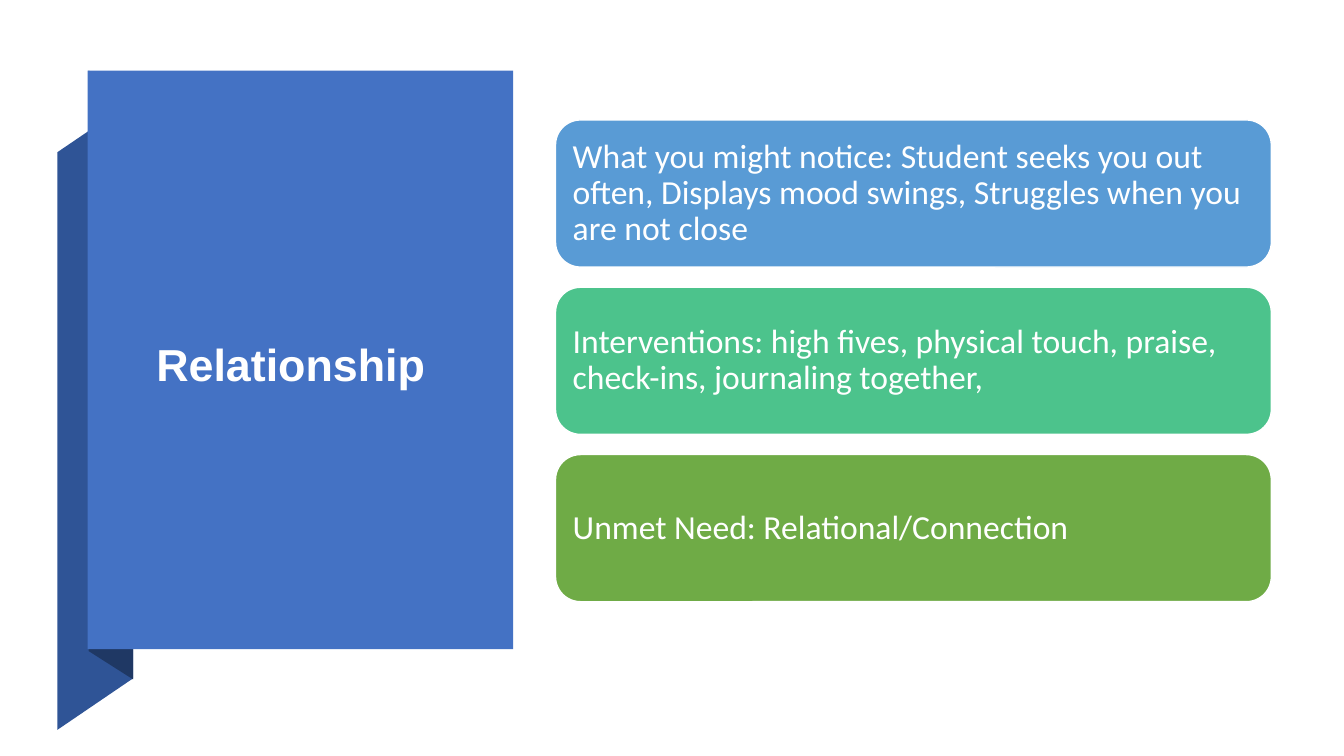
import pptx
import pptx.util
import pptx.dml.color
import pptx.enum.shapes
import pptx.enum.text

RGBColor = pptx.dml.color.RGBColor
SHAPE = pptx.enum.shapes.MSO_SHAPE
PX = 9144

WHITE = RGBColor(0xFF, 0xFF, 0xFF)
PANEL_BLUE = RGBColor(0x44, 0x72, 0xC4)
RIBBON_BLUE = RGBColor(0x2F, 0x54, 0x96)
FOLD_NAVY = RGBColor(0x1F, 0x38, 0x64)
SKY = RGBColor(0x59, 0x9B, 0xD5)
MINT = RGBColor(0x4C, 0xC3, 0x8C)
GREEN = RGBColor(0x6F, 0xAB, 0x46)

TITLE_FONT = {"name": "Arial", "size": pptx.util.Pt(32), "bold": True}
CARD_FONT = {"name": "Calibri", "size": pptx.util.Pt(24), "bold": False}

CARDS = [
    ("What you might notice: Student seeks you out often, Displays mood swings, "
     "Struggles when you are not close", SKY),
    ("Interventions: high fives, physical touch, praise, check-ins, "
     "journaling together,", MINT),
    ("Unmet Need: Relational/Connection", GREEN),
]


def emu(*lengths):
    """Turn px lengths into EMU."""
    return [pptx.util.Emu(n * PX) for n in lengths]


def paint(sp, color):
    """Give a shape a flat fill with no outline or shadow."""
    sp.shadow.inherit = False
    sp.fill.solid()
    sp.fill.fore_color.rgb = color
    sp.line.fill.background()


def write(sp, text, font, inset_x, inset_y):
    """Write one left-aligned, vertically centred white paragraph."""
    tf = sp.text_frame
    inset_x, inset_y = emu(inset_x, inset_y)
    frame = {
        "word_wrap": True,
        "auto_size": pptx.enum.text.MSO_AUTO_SIZE.NONE,
        "vertical_anchor": pptx.enum.text.MSO_ANCHOR.MIDDLE,
        "margin_left": inset_x, "margin_right": inset_x,
        "margin_top": inset_y, "margin_bottom": inset_y,
    }
    for key, value in frame.items():
        setattr(tf, key, value)
    p = tf.paragraphs[0]
    p.alignment = pptx.enum.text.PP_ALIGN.LEFT
    p.line_spacing = 0.9
    r = p.add_run()
    r.text = text
    for key, value in font.items():
        setattr(r.font, key, value)
    r.font.color.rgb = WHITE


def add_outline(slide, x, y, points, color):
    """Draw a closed polygon whose points are offsets from x, y."""
    points = [(x + dx, y + dy) for dx, dy in points]
    builder = slide.shapes.build_freeform(*points[0], scale=PX)
    builder.add_line_segments(points[1:], close=True)
    paint(builder.convert_to_shape(), color)


def add_title_panel(slide, x, y, w, h, text):
    """Place the folded ribbon, the panel and the title in the box."""
    add_outline(slide, x, y, [(-30, h + 80), (45, h + 29), (45, 30), (-30, 81)],
                RIBBON_BLUE)
    add_outline(slide, x, y, [(1, h + 2), (45, h + 30), (45, 29), (1, 0)],
                FOLD_NAVY)
    paint(slide.shapes.add_shape(SHAPE.RECTANGLE, *emu(x, y, w, h)), PANEL_BLUE)
    title = slide.shapes.title
    title.left, title.top, title.width, title.height = emu(
        x + 58, y + 97, w - 87, h - 180)
    write(title, text, TITLE_FONT, 10, 5)
    title.element.getparent().append(title.element)


def add_cards(slide, x, y, w, h, cards, gap=20):
    """Stack equal rounded cards down the box."""
    card_h = (h - gap * (len(cards) - 1)) // len(cards)
    for i, (text, color) in enumerate(cards):
        sp = slide.shapes.add_shape(
            SHAPE.ROUNDED_RECTANGLE, *emu(x, y + i * (card_h + gap), w, card_h))
        sp.adjustments[0] = 0.17
        paint(sp, color)
        sp.line.color.rgb = WHITE
        sp.line.width = pptx.util.Pt(1)
        write(sp, text, CARD_FONT, 10, 10)


def main():
    """Build the slide and save it."""
    prs = pptx.Presentation()
    prs.slide_width, prs.slide_height = emu(1333, 750)
    slide = prs.slides.add_slide(prs.slide_layouts.get_by_name("Title Only"))
    slide.background.fill.solid()
    slide.background.fill.fore_color.rgb = WHITE
    add_title_panel(slide, 87, 70, 422, 574, "Relationship")
    add_cards(slide, 551, 119, 710, 478, CARDS)
    prs.save("out.pptx")


if __name__ == "__main__":
    main()
